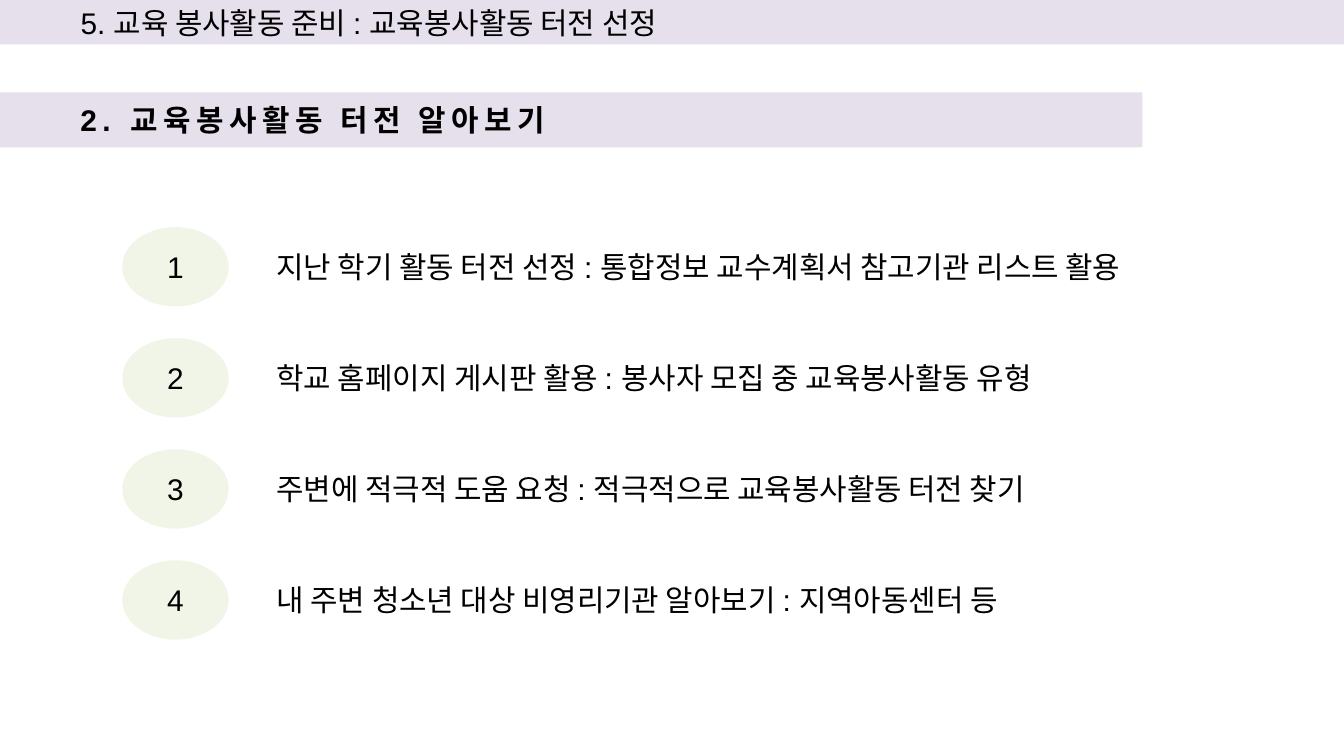
from dataclasses import dataclass

from pptx import Presentation
from pptx.dml.color import RGBColor
from pptx.enum.shapes import MSO_SHAPE
from pptx.enum.text import MSO_ANCHOR, MSO_AUTO_SIZE, PP_ALIGN
from pptx.oxml.ns import qn
from pptx.util import Pt
from lxml.etree import SubElement


@dataclass(frozen=True)
class Theme:
    band: RGBColor = RGBColor(0xE6, 0xE0, 0xEC)
    badge: RGBColor = RGBColor(0xEB, 0xF1, 0xDE)
    ink: RGBColor = RGBColor(0, 0, 0)
    font: str = "Arial"
    size: int = 16
    badge_alpha: int = 70


THEME = Theme()
TITLE = "5. 교육 봉사활동 준비 : 교육봉사활동 터전 선정"
HEADING = "2. 교육봉사활동 터전 알아보기"
STEPS = [
    "지난 학기 활동 터전 선정 : 통합정보 교수계획서 참고기관 리스트 활용",
    "학교 홈페이지 게시판 활용 : 봉사자 모집 중 교육봉사활동 유형",
    "주변에 적극적 도움 요청 : 적극적으로 교육봉사활동 터전 찾기",
    "내 주변 청소년 대상 비영리기관 알아보기 : 지역아동센터 등",
]


def set_text(sp, text, align, bold=False):
    tf = sp.text_frame
    tf.text = text
    tf.word_wrap = True
    tf.auto_size = MSO_AUTO_SIZE.NONE
    tf.vertical_anchor = MSO_ANCHOR.MIDDLE
    p = tf.paragraphs[0]
    p.alignment = align
    r = p.runs[0]
    r.font.name = THEME.font
    r.font.size = Pt(THEME.size)
    r.font.bold = bold
    r.font.color.rgb = THEME.ink
    return p


def add_plain_shape(s, kind, x, y, w, h):
    sp = s.shapes.add_shape(kind, Pt(x), Pt(y), Pt(w), Pt(h))
    sp.shadow.inherit = False
    sp.line.fill.background()
    return sp


def fill_band(sp, text, bold=False):
    sp.fill.solid()
    sp.fill.fore_color.rgb = THEME.band
    p = set_text(sp, text, PP_ALIGN.JUSTIFY, bold)
    pPr = p._p.get_or_add_pPr()
    pPr.set("marL", str(Pt(36)))
    pPr.set("indent", "0")
    return p


def add_title_band(s, x, y, w, h):
    sp = s.shapes.title
    sp.left, sp.top, sp.width, sp.height = Pt(x), Pt(y), Pt(w), Pt(h)
    fill_band(sp, TITLE)


def add_heading_band(s, x, y, w, h):
    sp = add_plain_shape(s, MSO_SHAPE.RECTANGLE, x, y, w, h)
    p = fill_band(sp, HEADING, bold=True)
    # Letter spacing of 3 pt
    p.runs[0].font._element.set("spc", "300")


def add_step(s, number, text, x, y, w, h):
    # Description
    label_x = 73.5
    sp = add_plain_shape(s, MSO_SHAPE.ROUNDED_RECTANGLE, x + label_x, y, w - label_x, h)
    sp.fill.background()
    set_text(sp, text, PP_ALIGN.LEFT)
    # Numbered badge, partly transparent
    sp = add_plain_shape(s, MSO_SHAPE.OVAL, x, y, 57, h)
    sp.fill.solid()
    sp.fill.fore_color.rgb = THEME.badge
    color = sp._element.spPr.find(qn("a:solidFill"))[0]
    SubElement(color, qn("a:alpha")).set("val", str(THEME.badge_alpha * 1000))
    set_text(sp, str(number), PP_ALIGN.CENTER)


def add_steps(s, x, y, w, h):
    row_h = 42.5
    pitch = (h - row_h) / (len(STEPS) - 1)
    for i, text in enumerate(STEPS):
        add_step(s, i + 1, text, x, y + i * pitch, w, row_h)


def main():
    prs = Presentation()
    prs.slide_width, prs.slide_height = Pt(720), Pt(405)
    s = prs.slides.add_slide(prs.slide_layouts[5])
    add_title_band(s, 0, 0, 720, 23.75)
    add_heading_band(s, 0, 49.5, 612, 29.5)
    add_steps(s, 65.5, 121.7, 612, 221)
    prs.save("out.pptx")


if __name__ == "__main__":
    main()
